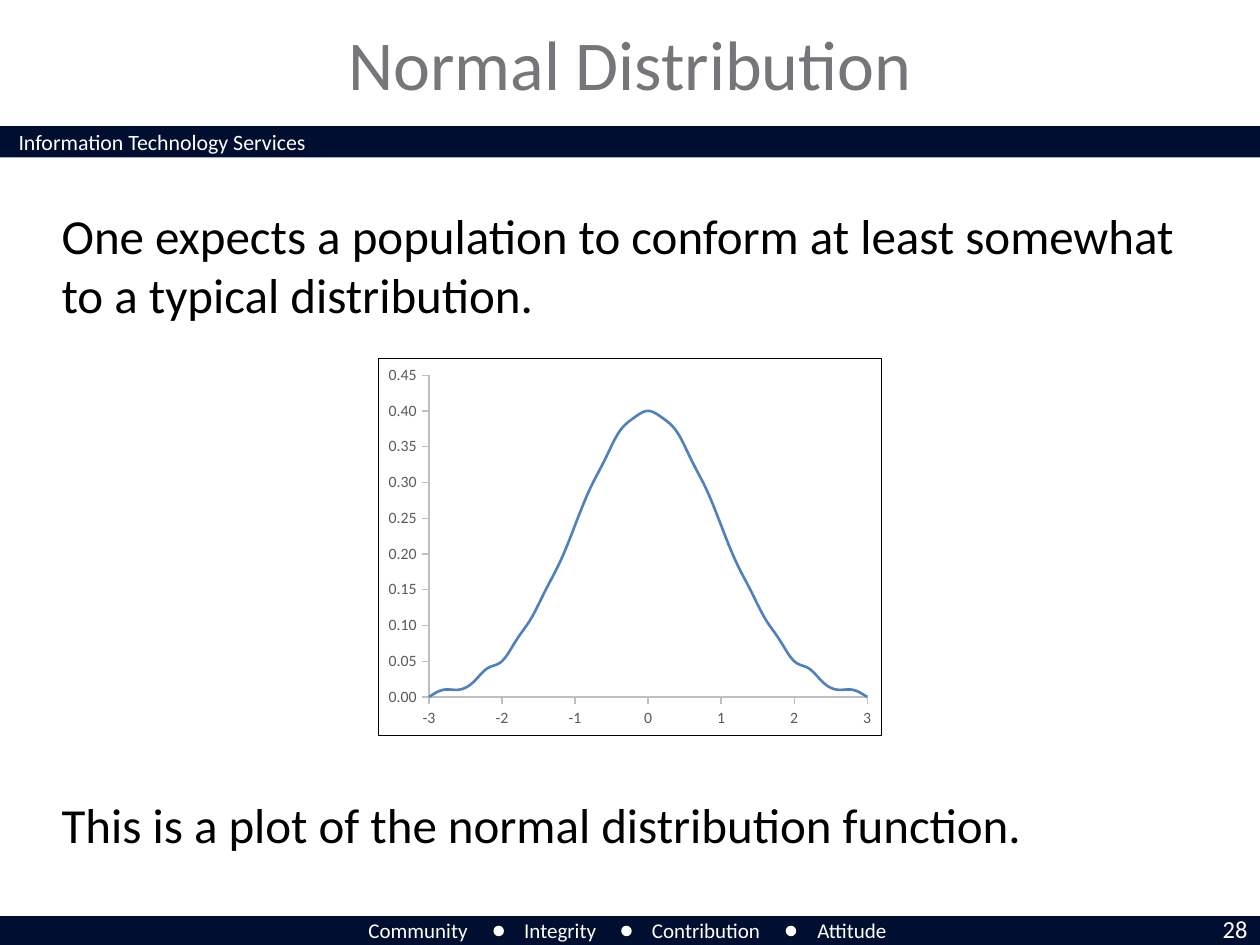
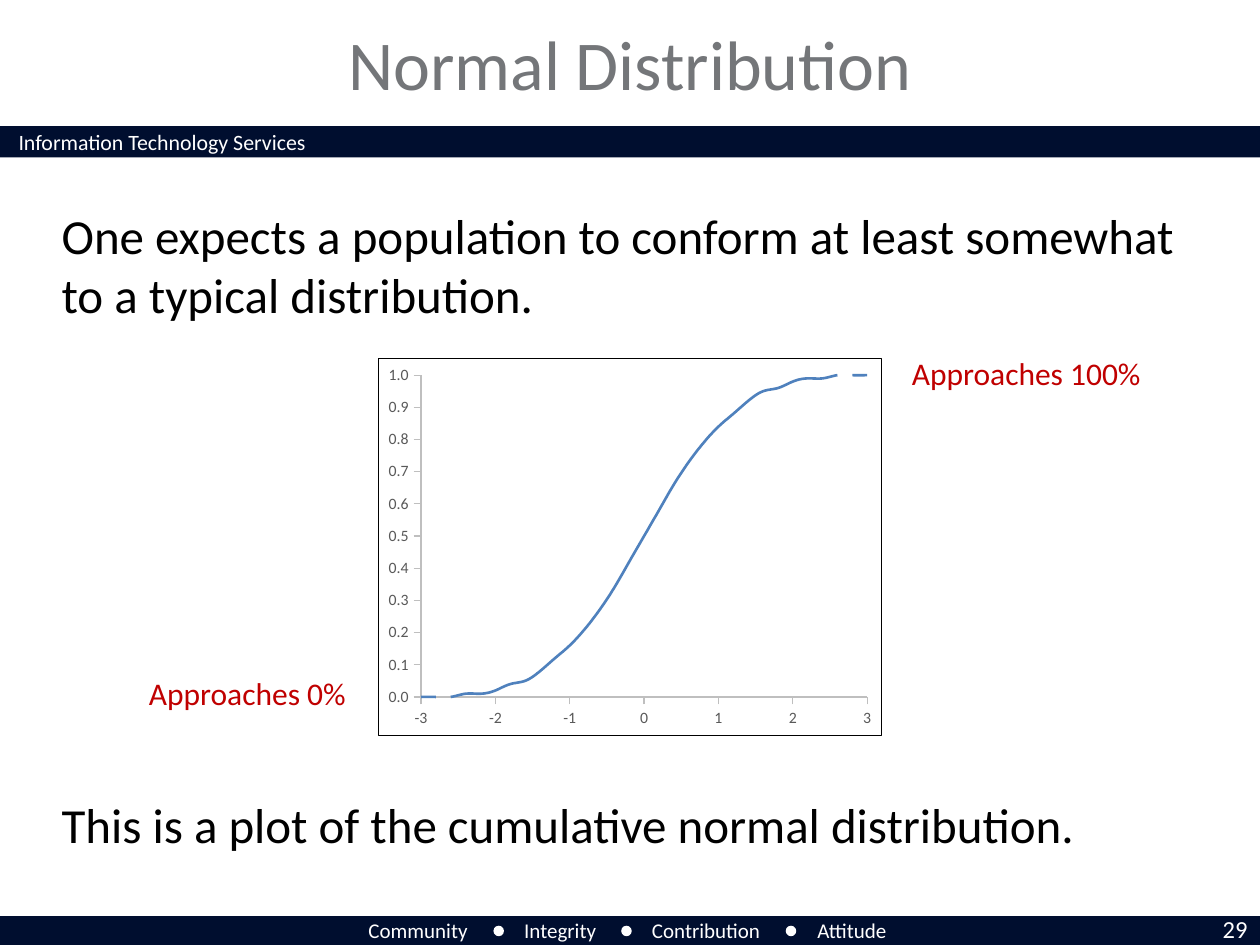
from math import erf, exp, pi, sqrt

from lxml import etree
from pptx import Presentation
from pptx.chart.data import XyChartData
from pptx.dml.color import RGBColor
from pptx.enum.chart import XL_AXIS_CROSSES as Cross, XL_CHART_TYPE as Kind, XL_TICK_MARK as Tick
from pptx.enum.shapes import MSO_SHAPE as Form
from pptx.enum.text import MSO_ANCHOR as Anchor, MSO_AUTO_SIZE as Auto, PP_ALIGN as Align
from pptx.oxml import parse_xml
from pptx.oxml.ns import nsdecls, qn
from pptx.util import Pt

NAVY = RGBColor(0x00, 0x0E, 0x2F)
WHITE = RGBColor(0xFF, 0xFF, 0xFF)
BLACK = RGBColor(0x00, 0x00, 0x00)
GREY = RGBColor(0x74, 0x76, 0x79)
RED = RGBColor(0xC0, 0x00, 0x00)
BLUE = RGBColor(0x4F, 0x81, 0xBD)
LABEL = RGBColor(0x59, 0x59, 0x59)
RULE = RGBColor(0xBF, 0xBF, 0xBF)
FONT = "Calibri"


def write(shape, *lines, size, color=BLACK, align=Align.LEFT, gap=0, wrap=True,
          anchor=Anchor.TOP):
    """Fill a shape with plain paragraphs, set apart by gap points."""
    frame = shape.text_frame
    frame.auto_size = Auto.NONE
    frame.word_wrap = wrap
    frame.vertical_anchor = anchor
    frame.text = "\n".join(lines)
    for i, para in enumerate(frame.paragraphs):
        props = para._p.get_or_add_pPr()
        props.set("marL", "0")
        props.set("indent", "0")
        para.space_before = Pt(gap if i else 0)
        etree.SubElement(props, qn("a:buNone"))
        para.alignment = align
        para.font.size = Pt(size)
        para.font.name = FONT
        para.font.color.rgb = color


def place(shape, *box):
    shape.left, shape.top, shape.width, shape.height = map(Pt, box)
    return shape


deck = Presentation()
deck.slide_width, deck.slide_height = Pt(720), Pt(540)

# Shared parts
BANDS = [(Form.RECTANGLE, NAVY, (0, 72, 720, 18)),
         (Form.RECTANGLE, NAVY, (0, 523.5, 720, 16.5))]
DOTS = [(Form.OVAL, WHITE, (x, 529, 6, 6)) for x in (282, 355, 449)]
MOTTO = [("Community", 203.5), ("Integrity", 292.5), ("Contribution", 365.5), ("Attitude", 460)]

# The two curves: density and cumulative share
xs = [n / 5 for n in range(-15, 16)]
density = [round(exp(-x * x / 2) / sqrt(2 * pi), 2) for x in xs]
total = [round((1 + erf(x / sqrt(2))) / 2, 2) for x in xs]

PAGES = [
    dict(page=28, ys=density, top=0.45, step=0.05, form="0.00", notes=[],
         end="This is a plot of the normal distribution function."),
    dict(page=29, ys=total, top=1, step=0.1, form="0.0",
         notes=[("Approaches 100%", (514, 199, 147, 29)),
                ("Approaches 0%", (78, 381.5, 128, 29))],
         end="This is a plot of the cumulative normal distribution."),
]

for item in PAGES:
    slide = deck.slides.add_slide(deck.slide_layouts[1])
    shapes = slide.shapes

    # Bands and footer
    for form, color, box in BANDS + DOTS:
        mark = shapes.add_shape(form, *map(Pt, box))
        mark.shadow.inherit = False
        mark.fill.solid()
        mark.fill.fore_color.rgb = color
        mark.line.fill.background()
    unit = shapes.add_textbox(Pt(3.5), Pt(70), Pt(245), Pt(23))
    write(unit, "Information Technology Services", size=12.5, color=WHITE)
    for word, x in MOTTO:
        box = shapes.add_textbox(Pt(x), Pt(520.5), Pt(80), Pt(19.5))
        write(box, word, size=12, color=WHITE, wrap=False)
    num = shapes.add_textbox(Pt(665), Pt(519), Pt(55), Pt(21))
    write(num, str(item["page"]), size=14, color=WHITE, align=Align.RIGHT)

    # Title and body
    title = place(shapes.title, 72, 7.2, 576, 57.6)
    write(title, "Normal Distribution", size=40, color=GREY, align=Align.CENTER,
          anchor=Anchor.MIDDLE)
    body = place(slide.placeholders[1], 28, 114, 665, 380)
    write(body, "One expects a population to conform at least somewhat to a typical distribution.",
          item["end"], size=28, gap=269)

    # Chart
    data = XyChartData()
    curve = data.add_series("Series 1")
    for x, y in zip(xs, item["ys"]):
        curve.add_data_point(x, y)
    chart = shapes.add_chart(Kind.XY_SCATTER_SMOOTH_NO_MARKERS, Pt(216), Pt(204.5),
                             Pt(288), Pt(216), data).chart
    chart.has_title = chart.has_legend = False
    chart.font.size = Pt(10)
    chart.font.name = FONT
    chart.font.color.rgb = BLACK
    frame = parse_xml(
        f'<c:spPr {nsdecls("c", "a")}>'
        f'<a:solidFill><a:srgbClr val="{WHITE}"/></a:solidFill>'
        f'<a:ln w="{Pt(0.75)}"><a:solidFill><a:srgbClr val="{BLACK}"/></a:solidFill></a:ln>'
        '</c:spPr>')
    chart.element.find(qn("c:chart")).addnext(frame)

    plot = chart.plots[0]
    plot.vary_by_categories = False
    line = plot.series[0]
    line.format.line.color.rgb = BLUE
    line.format.line.width = Pt(1.5)
    line._element.find(qn("c:smooth")).set("val", "1")

    # Axes
    for axis, low, high, step, form in (
            (chart.category_axis, -3, 3, 1, "0"),
            (chart.value_axis, 0, item["top"], item["step"], item["form"])):
        axis.minimum_scale, axis.maximum_scale, axis.major_unit = low, high, step
        axis.has_major_gridlines = False
        axis.major_tick_mark, axis.minor_tick_mark = Tick.OUTSIDE, Tick.NONE
        axis.crosses = Cross.MINIMUM
        axis.format.line.color.rgb = RULE
        axis.format.line.width = Pt(0.75)
        labels = axis.tick_labels
        labels.number_format, labels.number_format_is_linked = form, False
        labels.font.size = Pt(9)
        labels.font.name = FONT
        labels.font.color.rgb = LABEL

    # Notes beside the chart
    for text, box in item["notes"]:
        write(shapes.add_textbox(*map(Pt, box)), text, size=18, color=RED, wrap=False)

deck.save("out.pptx")
